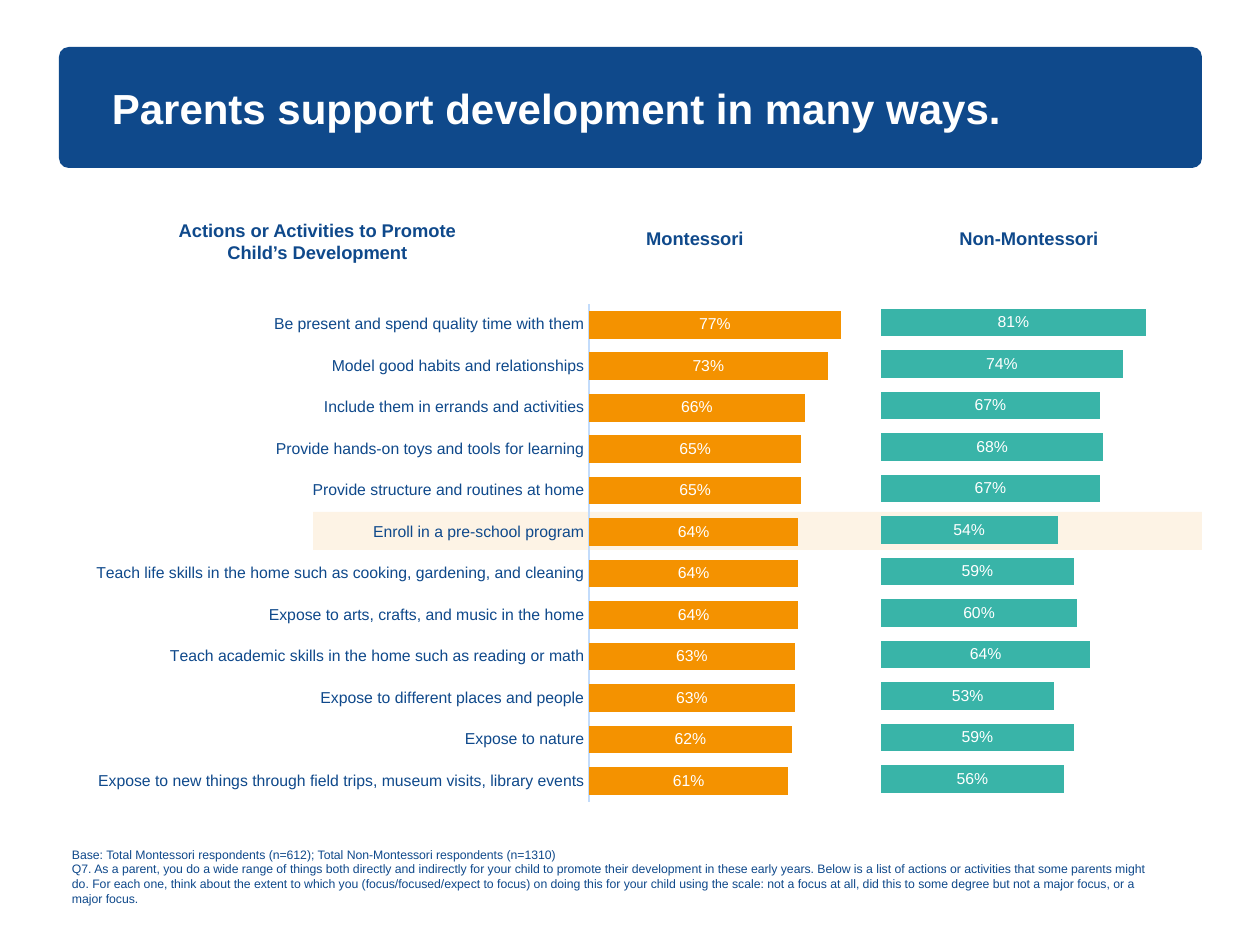
from lxml import etree
from pptx import Presentation
from pptx.chart.data import CategoryChartData
from pptx.dml.color import RGBColor
from pptx.enum.chart import XL_CHART_TYPE, XL_LABEL_POSITION, XL_TICK_MARK
from pptx.enum.shapes import MSO_SHAPE
from pptx.enum.text import MSO_ANCHOR, PP_ALIGN
from pptx.oxml import parse_xml
from pptx.oxml.ns import nsdecls, qn
from pptx.util import Pt

PX = 914400 / 126
BAR = XL_CHART_TYPE.BAR_STACKED
LABEL_CENTER = XL_LABEL_POSITION.CENTER
NO_TICKS = XL_TICK_MARK.NONE
RECT, ROUNDED = MSO_SHAPE.RECTANGLE, MSO_SHAPE.ROUNDED_RECTANGLE
TOP, MIDDLE, BOTTOM = MSO_ANCHOR.TOP, MSO_ANCHOR.MIDDLE, MSO_ANCHOR.BOTTOM
LEFT, CENTER = PP_ALIGN.LEFT, PP_ALIGN.CENTER
FONT = "Arial"
COLORS = {"navy": "0F498B", "orange": "F49200", "teal": "39B4A8",
          "axis": "C3DCFB", "white": "FFFFFF"}

ACTIONS = [
    ("Be present and spend quality time with them", 0.77, 0.81),
    ("Model good habits and relationships", 0.73, 0.74),
    ("Include them in errands and activities", 0.66, 0.67),
    ("Provide hands-on toys and tools for learning", 0.65, 0.68),
    ("Provide structure and routines at home", 0.65, 0.67),
    ("Enroll in a pre-school program", 0.64, 0.54),
    ("Teach life skills in the home such as cooking, gardening, and cleaning", 0.64, 0.59),
    ("Expose to arts, crafts, and music in the home", 0.64, 0.60),
    ("Teach academic skills in the home such as reading or math", 0.63, 0.64),
    ("Expose to different places and people", 0.63, 0.53),
    ("Expose to nature", 0.62, 0.59),
    ("Expose to new things through field trips, museum visits, library events", 0.61, 0.56),
]
FOOTNOTES = [
    ("Base: Total Montessori respondents (n=612); "
     "Total Non-Montessori respondents (n=1310)", 0.85),
    ("Q7. As a parent, you do a wide range of things both directly and indirectly for "
     "your child to promote their development in these early years. Below is a list of "
     "actions or activities that some parents might do. For each one, think about the "
     "extent to which you (focus/focused/expect to focus) on doing this for your child "
     "using the scale: not a focus at all, did this to some degree but not a major "
     "focus, or a major focus.", None),
]


def emu(*lengths):
    return [round(n * PX) for n in lengths]


def rgb(name):
    return RGBColor.from_string(COLORS[name])


def set_font(font, size, color, bold=False):
    font.name, font.size, font.bold = FONT, Pt(size), bold
    font.color.rgb = rgb(color)


def write(tf, text, size=10.5, color="navy", bold=False, align=LEFT, anchor=TOP,
          margin=13, spacing=None, first=True):
    """Put one formatted paragraph in a text frame."""
    tf.word_wrap, tf.vertical_anchor = True, anchor
    tf.margin_left, tf.margin_right = emu(margin, margin)
    p = tf.paragraphs[0] if first else tf.add_paragraph()
    p.alignment, p.line_spacing = align, spacing
    r = p.add_run()
    r.text = text
    set_font(r.font, size, color, bold)


class Deck:
    def __init__(self, width, height):
        self.prs = Presentation()
        self.prs.slide_width, self.prs.slide_height = emu(width, height)
        self.s = self.prs.slides.add_slide(self.prs.slide_layouts[6])

    def shape(self, kind, box, color, alpha=None):
        sp = self.s.shapes.add_shape(kind, *emu(*box))
        sp.shadow.inherit = False
        sp.fill.solid()
        sp.fill.fore_color.rgb = rgb(color)
        sp.line.fill.background()
        if alpha is not None:
            clr = sp.fill._xPr.find(".//" + qn("a:srgbClr"))
            etree.SubElement(clr, qn("a:alpha")).set("val", str(alpha * 1000))
        return sp

    def text(self, box, text, **fmt):
        sp = self.s.shapes.add_textbox(*emu(*box))
        write(sp.text_frame, text, **fmt)
        return sp

    def bars(self, box, plot, categories, values, color, show_categories):
        data = CategoryChartData(number_format="0%")
        data.categories = categories
        data.add_series("Series 1", values)
        chart = self.s.shapes.add_chart(BAR, *emu(*box), data).chart
        chart.has_legend = chart.has_title = False
        set_font(chart.font, 9, "navy")

        # Axes
        cat, val = chart.category_axis, chart.value_axis
        cat.reverse_order = True
        cat.visible = show_categories
        cat.major_tick_mark = NO_TICKS
        cat.format.line.color.rgb = rgb("axis")
        cat.format.line.width = Pt(0.75)
        val.minimum_scale, val.maximum_scale = 0, 1
        val.has_major_gridlines = val.visible = False

        # Bars and labels
        bar_plot = chart.plots[0]
        bar_plot.gap_width, bar_plot.overlap = 50, 100
        bar_plot.vary_by_categories = False
        fill = bar_plot.series[0].format.fill
        fill.solid()
        fill.fore_color.rgb = rgb(color)
        bar_plot.has_data_labels = True
        labels = bar_plot.data_labels
        labels.show_value, labels.position = True, LABEL_CENTER
        labels.number_format, labels.number_format_is_linked = "0%", False
        set_font(labels.font, 9, "white")

        # Fixed inner plot area, as fractions of the chart frame
        x, y, w, h = box
        px, py, pw, ph = plot
        places = {"x": (px - x) / w, "y": (py - y) / h, "w": pw / w, "h": ph / h}
        modes = '<c:layoutTarget val="inner"/><c:xMode val="edge"/><c:yMode val="edge"/>'
        sizes = "".join(f'<c:{k} val="{v:.4f}"/>' for k, v in places.items())
        area = chart._chartSpace.chart.plotArea
        for old in area.findall(qn("c:layout")):
            area.remove(old)
        area.insert(0, parse_xml(f'<c:layout {nsdecls("c")}><c:manualLayout>'
                                 f'{modes}{sizes}</c:manualLayout></c:layout>'))


def main():
    deck = Deck(1260, 945)
    actions, montessori, others = zip(*ACTIONS)

    # Highlighted row and title banner
    deck.shape(RECT, (313, 512, 889, 38), "orange", alpha=10)
    banner = deck.shape(ROUNDED, (59, 47, 1143, 121), "navy")
    banner.adjustments[0] = 0.08
    write(banner.text_frame, "Parents support development in many ways.", size=24,
          color="white", bold=True, anchor=MIDDLE, margin=50)

    # Footnotes
    box = (59, 843, 1115, 69)
    (base, spacing), (question, _) = FOOTNOTES
    notes = deck.text(box, base, size=7, anchor=BOTTOM, spacing=spacing)
    write(notes.text_frame, question, size=7, anchor=BOTTOM, first=False)

    # Column headings
    for box, heading in [
        ((165, 213, 305, 57), "Actions or Activities to Promote Child’s Development"),
        ((601, 221, 188, 35), "Montessori"),
        ((935, 221, 188, 35), "Non-Montessori"),
    ]:
        deck.text(box, heading, bold=True, align=CENTER)

    # Bar charts on a shared scale
    deck.bars((21, 243, 1207, 596), (589, 304, 327, 498), actions, montessori,
              "orange", True)
    deck.bars((870, 241, 380, 596), (881, 302, 327, 498), range(1, 13), others,
              "teal", False)

    deck.prs.save("out.pptx")


if __name__ == "__main__":
    main()
